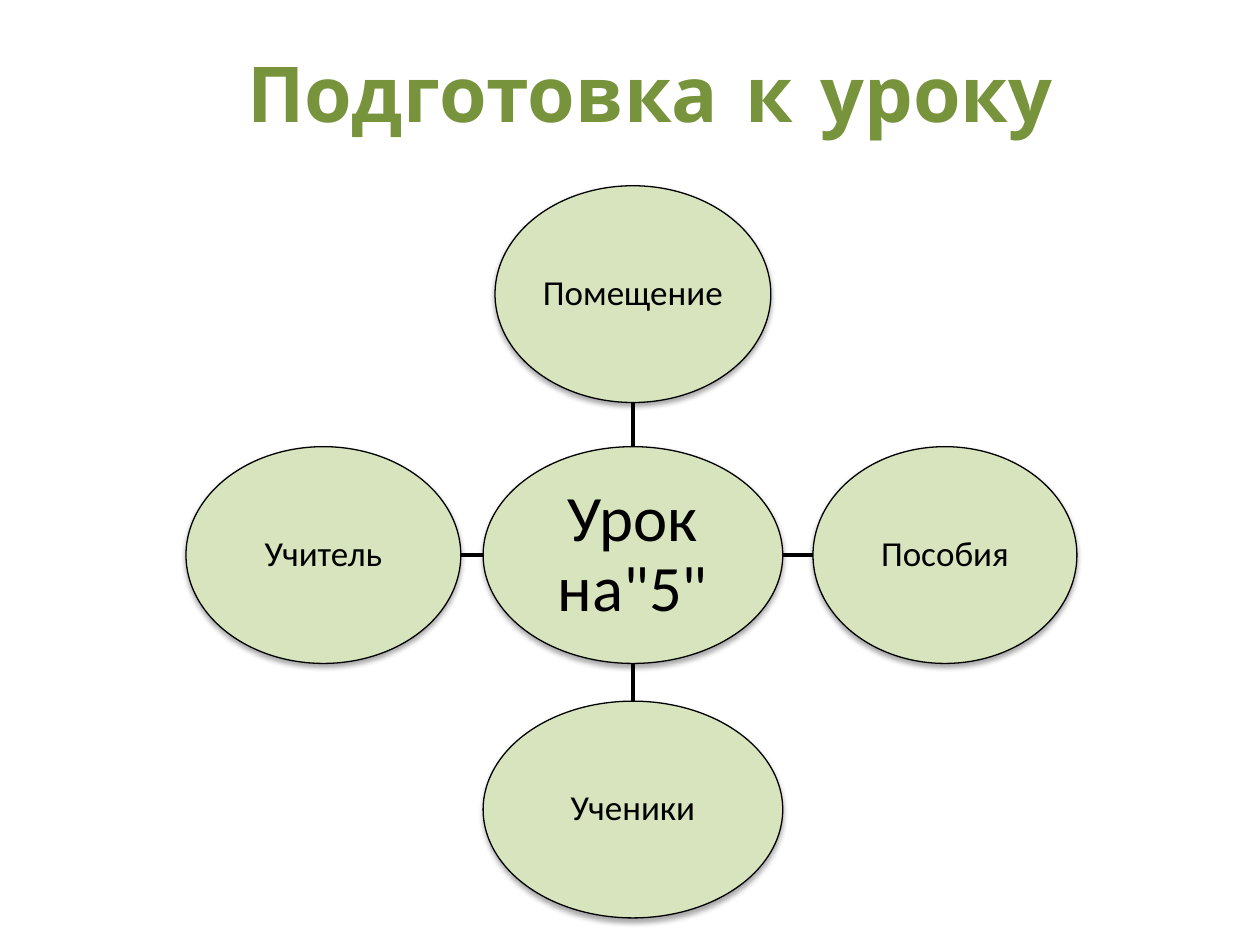
from lxml.etree import SubElement
from pptx import Presentation
from pptx.dml.color import RGBColor as RGB
from pptx.enum.shapes import MSO_CONNECTOR as Conn, MSO_SHAPE as Shape
from pptx.enum.text import MSO_ANCHOR as Anchor, PP_ALIGN as Align
from pptx.oxml import parse_xml
from pptx.oxml.ns import nsdecls, qn
from pptx.util import Cm, Pt

COLORS = {"title": "77933C", "fill": "D7E4BD", "ink": "000000"}
TITLE = "Подготовка к уроку"
HUB = ("Урок на\"5\"", 6.04)
SPOKES = [
    ("Помещение", 5.56, 0, -1, 0.89),
    ("Пособия", 5.32, 1, 0, 0.61),
    ("Ученики", 6.04, 0, 1, 0.76),
    ("Учитель", 5.54, -1, 0, 0.45),
]
CX, CY = 12.76, 11.19
HEIGHT = 4.37
SHADOW = (
    f'<a:effectLst {nsdecls("a")}>'
    '<a:outerShdw blurRad="39370" dist="22860" dir="5400000" rotWithShape="0">'
    '<a:srgbClr val="000000"><a:alpha val="35000"/></a:srgbClr>'
    '</a:outerShdw></a:effectLst>'
)


def rgb(name):
    return RGB.from_string(COLORS[name])


def write(sp, text, font, size, color, bold=False, inset=0.0, anchor=Anchor.MIDDLE):
    tf = sp.text_frame
    tf.word_wrap = True
    tf.vertical_anchor = anchor
    tf.margin_left = tf.margin_right = tf.margin_top = tf.margin_bottom = Cm(inset)
    p = tf.paragraphs[0]
    p.text = text
    p.alignment = Align.CENTER
    r = p.runs[0]
    r.font.name, r.font.size, r.font.bold = font, Pt(size), bold
    r.font.color.rgb = rgb(color)
    return p


def add_oval(s, text, cx, cy, width, size, inset):
    sp = s.shapes.add_shape(Shape.OVAL, Cm(cx - width / 2), Cm(cy - HEIGHT / 2),
                            Cm(width), Cm(HEIGHT))
    sp.fill.solid()
    sp.fill.fore_color.rgb = rgb("fill")
    sp.line.color.rgb = rgb("ink")
    sp.line.width = Pt(0.75)
    sp._element.spPr.append(parse_xml(SHADOW))
    write(sp, text, "Calibri", size, "ink", inset=inset).line_spacing = 0.9


def add_link(s, x1, y1, x2, y2):
    line = s.shapes.add_connector(Conn.STRAIGHT, Cm(x1), Cm(y1), Cm(x2), Cm(y2))
    line.line.color.rgb = rgb("ink")
    line.line.width = Pt(2)
    SubElement(line._element.spPr, qn("a:effectLst"))


def main():
    prs = Presentation()
    prs.slide_width, prs.slide_height = Cm(25.4), Cm(19.05)
    s = prs.slides.add_slide(prs.slide_layouts[6])

    title = s.shapes.add_textbox(Cm(2.31), Cm(0.91), Cm(21.59), Cm(4.09))
    write(title, TITLE, "Comic Neue", 44, "title", bold=True, anchor=Anchor.TOP)

    hub_text, hub_width = HUB
    add_oval(s, hub_text, CX, CY, hub_width, 37, 0.08)
    for text, width, dx, dy, gap in SPOKES:
        x1, y1 = CX + dx * hub_width / 2, CY + dy * HEIGHT / 2
        x2, y2 = x1 + dx * gap, y1 + dy * gap
        add_link(s, x1, y1, x2, y2)
        add_oval(s, text, x2 + dx * width / 2, y2 + dy * HEIGHT / 2, width, 20, 0.03)

    prs.save("out.pptx")


if __name__ == "__main__":
    main()
